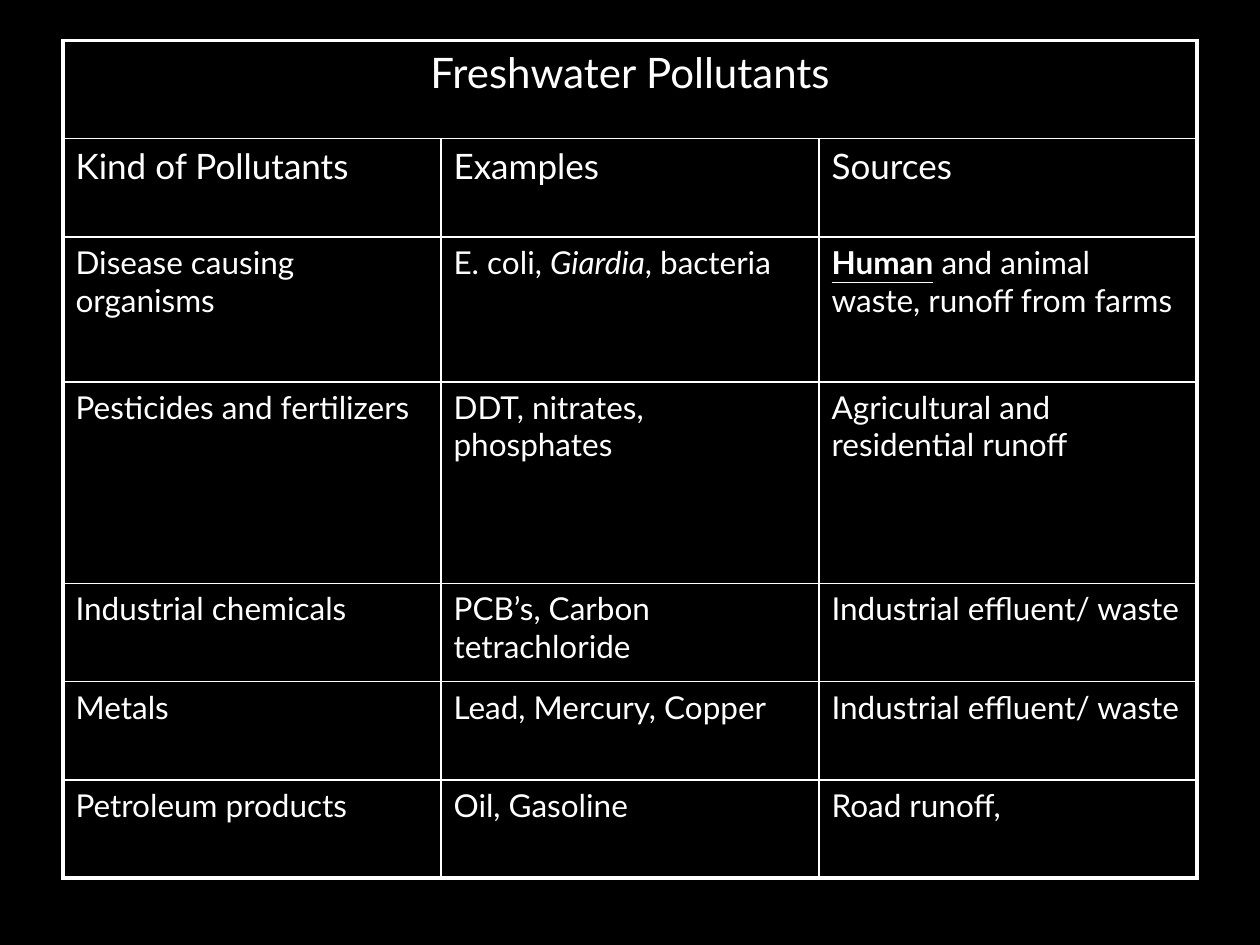
"""Build a slide with a bordered table of freshwater pollutants."""
from dataclasses import dataclass

from lxml.etree import SubElement
from pptx import Presentation
from pptx.dml.color import RGBColor
from pptx.enum.text import PP_ALIGN
from pptx.oxml.ns import qn
from pptx.util import Inches, Pt

CENTER, LEFT = PP_ALIGN.CENTER, PP_ALIGN.LEFT
BLANK_LAYOUT = 6


@dataclass(frozen=True)
class Theme:
    background: str = "000000"
    ink: str = "FFFFFF"
    font: str = "Lato"
    title_size: float = 24
    heading_size: float = 20
    body_size: float = 18
    outer_line: float = 2.25
    inner_line: float = 1
    space_before: int = 20


@dataclass(frozen=True)
class Words:
    text: str
    bold: bool = False
    italic: bool = False
    underline: bool = False


@dataclass(frozen=True)
class TableRow:
    height: float
    size: float
    cells: tuple[tuple[Words, ...], ...]


def plain_row(height: float, size: float, *texts: str) -> TableRow:
    """Describe a row whose cells each hold one plain run."""
    return TableRow(height, size, tuple((Words(text),) for text in texts))


THEME = Theme()
COLUMN_WIDTH, COLUMN_COUNT = 3, 3
ROWS = (
    plain_row(0.78, THEME.title_size, "Freshwater Pollutants"),
    plain_row(0.78, THEME.heading_size, "Kind of Pollutants", "Examples", "Sources"),
    TableRow(1.15, THEME.body_size, (
        (Words("Disease causing organisms"),),
        (Words("E. coli, "), Words("Giardia", italic=True), Words(", bacteria")),
        (Words("Human", bold=True, underline=True),
         Words(" and animal waste, runoff from farms")),
    )),
    plain_row(1.6, THEME.body_size, "Pesticides and fertilizers",
              "DDT, nitrates, phosphates", "Agricultural and residential runoff"),
    plain_row(0.78, THEME.body_size, "Industrial chemicals",
              "PCB’s, Carbon tetrachloride", "Industrial effluent/ waste"),
    plain_row(0.78, THEME.body_size, "Metals",
              "Lead, Mercury, Copper", "Industrial effluent/ waste"),
    plain_row(0.78, THEME.body_size, "Petroleum products",
              "Oil, Gasoline", "Road runoff,"),
)


def draw_borders(cell, outer_sides: dict[str, bool]) -> None:
    """Line the four sides of a cell, heavier on the table's edge."""
    properties = cell._tc.get_or_add_tcPr()
    for side, is_outer in outer_sides.items():
        width = THEME.outer_line if is_outer else THEME.inner_line
        line = SubElement(properties, qn(f"a:ln{side}"), w=str(int(Pt(width))))
        fill = SubElement(line, qn("a:solidFill"))
        SubElement(fill, qn("a:srgbClr"), val=THEME.ink)


def write_cell(cell, words: tuple[Words, ...], size: float, alignment: PP_ALIGN) -> None:
    """Write the runs of one cell."""
    para = cell.text_frame.paragraphs[0]
    para.alignment = alignment
    spacing = SubElement(para._p.get_or_add_pPr(), qn("a:spcBef"))
    SubElement(spacing, qn("a:spcPct"), val=str(THEME.space_before * 1000))
    for part in words:
        span = para.add_run()
        span.text = part.text
        span.font.name = THEME.font
        span.font.size = Pt(size)
        span.font.color.rgb = RGBColor.from_string(THEME.ink)
        span.font.bold = part.bold
        span.font.italic = part.italic
        span.font.underline = part.underline


def draw_table(page, rows: tuple[TableRow, ...]) -> None:
    """Draw the table with its title row merged across all columns."""
    frame = page.shapes.add_table(
        len(rows), COLUMN_COUNT, Inches(0.5), Inches(0.32),
        Inches(COLUMN_WIDTH * COLUMN_COUNT), Inches(sum(row.height for row in rows)))
    table = frame.table
    table.first_row = False
    table.horz_banding = False
    for column in table.columns:
        column.width = Inches(COLUMN_WIDTH)
    table.cell(0, 0).merge(table.cell(0, COLUMN_COUNT - 1))
    for row_index, row in enumerate(rows):
        table.rows[row_index].height = Inches(row.height)
        is_title = len(row.cells) == 1
        for column_index in range(COLUMN_COUNT):
            cell = table.cell(row_index, column_index)
            draw_borders(cell, {
                "L": is_title or column_index == 0,
                "R": is_title or column_index == COLUMN_COUNT - 1,
                "T": row_index == 0,
                "B": row_index == len(rows) - 1,
            })
            cell.fill.background()
        for column_index, words in enumerate(row.cells):
            write_cell(table.cell(row_index, column_index), words, row.size,
                       CENTER if is_title else LEFT)


def main() -> None:
    """Build and save the deck."""
    deck = Presentation()
    deck.slide_width, deck.slide_height = Inches(10), Inches(7.5)
    page = deck.slides.add_slide(deck.slide_layouts[BLANK_LAYOUT])
    page.background.fill.solid()
    page.background.fill.fore_color.rgb = RGBColor.from_string(THEME.background)
    draw_table(page, ROWS)
    deck.save("out.pptx")


if __name__ == "__main__":
    main()
